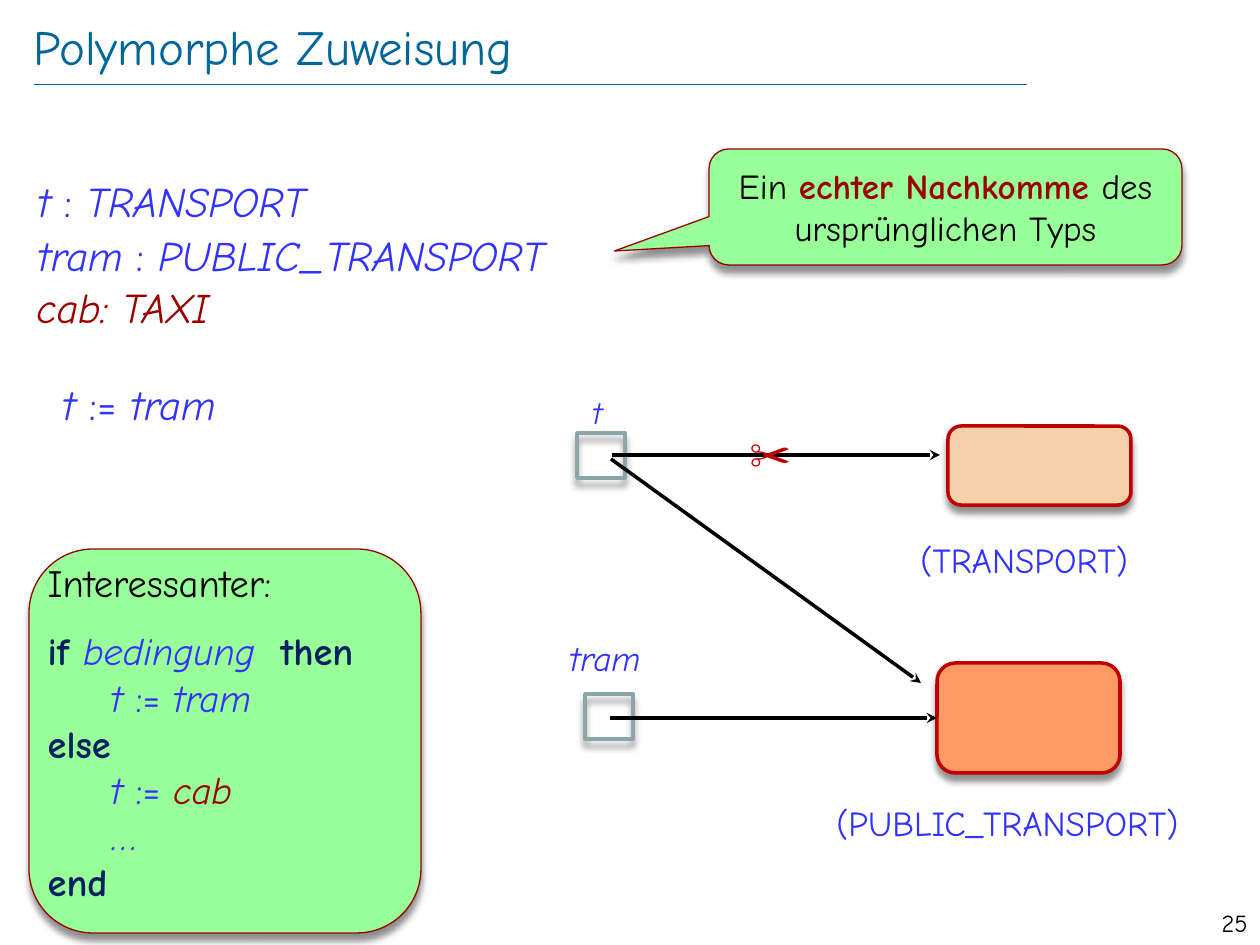
import pptx
import pptx.util
import pptx.dml.color
import pptx.enum.shapes
import pptx.enum.text
import pptx.oxml
import pptx.oxml.ns

RGB = pptx.dml.color.RGBColor
Pt = pptx.util.Pt
KIND = pptx.enum.shapes.MSO_SHAPE
LINE = pptx.enum.shapes.MSO_CONNECTOR.STRAIGHT
ALIGN = pptx.enum.text.PP_ALIGN
ANCHOR = pptx.enum.text.MSO_ANCHOR

FONT = "Comic Neue"
BLACK = RGB(0x00, 0x00, 0x00)
TEAL = RGB(0x00, 0x66, 0x99)
BLUE = RGB(0x33, 0x33, 0xFF)
NAVY = RGB(0x00, 0x20, 0x60)
WINE = RGB(0x99, 0x00, 0x00)
RED = RGB(0xC0, 0x00, 0x00)
GREEN = RGB(0x99, 0xFF, 0x99)
SAND = RGB(0xF4, 0xD1, 0xAA)
CORAL = RGB(0xFF, 0x99, 0x66)
GREY = RGB(0x8A, 0xA6, 0xA8)

NS = pptx.oxml.ns.nsdecls("a")
SHADOW = (f'<a:effectLst {NS}><a:outerShdw blurRad="50800" dist="50800" dir="5400000" '
          'rotWithShape="0"><a:srgbClr val="000000"><a:alpha val="43000"/></a:srgbClr>'
          '</a:outerShdw></a:effectLst>')


def px(n):
    return pptx.util.Emu(round(n * 914400 / 126))


def xml(text):
    return pptx.oxml.parse_xml(text)


def place(shape, x, y, w, h):
    shape.left, shape.top, shape.width, shape.height = px(x), px(y), px(w), px(h)


def write(para, size, *runs):
    """Add runs of (text, colour, style); the style may hold b, i and n for a line break."""
    for text, color, style in runs:
        run = para.add_run()
        run.text = text
        font = run.font
        font.name, font.size, font.color.rgb = FONT, Pt(size), color
        font.bold, font.italic = "b" in style, "i" in style
        if "n" in style:
            para.add_line_break()


def inset(frame, *sides):
    (frame.margin_left, frame.margin_top,
     frame.margin_right, frame.margin_bottom) = map(px, sides)


def label(slide, x, y, w, h, size, *runs, wrap=False):
    box = slide.shapes.add_textbox(px(x), px(y), px(w), px(h))
    box.text_frame.word_wrap = wrap
    para = box.text_frame.paragraphs[0]
    write(para, size, *runs)
    return para


def block(slide, kind, x, y, w, h, fill, edge, width):
    """Add a preset shape with a soft shadow; fill None leaves it hollow."""
    shape = slide.shapes.add_shape(kind, px(x), px(y), px(w), px(h))
    if fill is None:
        shape.fill.background()
    else:
        shape.fill.solid()
        shape.fill.fore_color.rgb = fill
    shape.line.color.rgb, shape.line.width = edge, Pt(width)
    shape.shadow.inherit = False
    props = shape._element.spPr
    props.remove(props.find(pptx.oxml.ns.qn("a:effectLst")))
    props.append(xml(SHADOW))
    return shape


def line(slide, x1, y1, x2, y2, color, width, head=False):
    link = slide.shapes.add_connector(LINE, px(x1), px(y1), px(x2), px(y2))
    link.line.color.rgb, link.line.width = color, Pt(width)
    if head:
        link.line._get_or_add_ln().append(xml(f'<a:tailEnd {NS} type="stealth"/>'))
    link._element.spPr.append(xml(f"<a:effectLst {NS}/>"))
    return link


def header(slide, x, y, w, h):
    title = slide.shapes.title
    place(title, x, y, w, h)
    frame = title.text_frame
    frame.vertical_anchor = ANCHOR.MIDDLE
    inset(frame, 0, 0, 0, 0)
    para = frame.paragraphs[0]
    para.alignment = ALIGN.LEFT
    write(para, 28, ("Polymorphe Zuweisung", TEAL, ""))
    line(slide, x, y + 68, x + 993, y + 68, TEAL, 0.25)


def decls(slide, x, y, w, h):
    """Place the declarations and the assignment below them."""
    body = slide.placeholders[1]
    place(body, x, y, w, h)
    frame = body.text_frame
    rows = [("t ", " TRANSPORT"), ("tram ", " PUBLIC_TRANSPORT")]
    for i, (name, kind) in enumerate(rows):
        para = frame.add_paragraph() if i else frame.paragraphs[0]
        props = para._p.get_or_add_pPr()
        props.set("marL", "0")
        props.set("indent", "0")
        props.append(xml(f"<a:buNone {NS}/>"))
        para.line_spacing = 0.9
        para.space_before = Pt(5 if i else 0)
        write(para, 24, (name, BLUE, "i"), (":", BLUE, ""), (kind, BLUE, "i"))
    label(slide, x - 1, y + 100, 314, 63, 24, ("cab: TAXI", WINE, "i"), wrap=True)
    label(slide, x + 25, y + 197, 314, 63, 24, ("t ", BLUE, "i"),
          (":=", BLUE, ""), (" tram", BLUE, "i"), wrap=True)


def callout(slide, x, y, w, h):
    shape = block(slide, KIND.ROUNDED_RECTANGULAR_CALLOUT, x, y, w, h, GREEN, WINE, 0.75)
    for i, value in enumerate((-0.7, 0.38, 0.17)):
        shape.adjustments[i] = value
    frame = shape.text_frame
    frame.word_wrap = True
    frame.vertical_anchor = ANCHOR.MIDDLE
    para = frame.paragraphs[0]
    para.alignment = ALIGN.CENTER
    write(para, 20, ("Ein ", BLACK, ""), ("echter Nachkomme ", WINE, "b"),
          ("des ursprünglichen Typs", BLACK, ""))


def graph(slide, x, y):
    """Place the references at left, the objects at right and the arrows between."""
    block(slide, KIND.ROUNDED_RECTANGLE, x + 371, y + 39, 183, 79, SAND, RED, 2)
    public = block(slide, KIND.ROUNDED_RECTANGLE, x + 360, y + 276, 183, 110, CORAL, RED, 2)
    label(slide, x + 331, y + 145, 270, 55, 20, ("(TRANSPORT)", BLUE, ""))
    label(slide, x + 247, y + 408, 418, 55, 20, ("(PUBLIC_TRANSPORT)", BLUE, ""))
    for dx, dy in ((0, 46), (8, 307)):
        block(slide, KIND.RECTANGLE, x + dx, y + dy, 48, 45, None, GREY, 2)
    line(slide, x + 35, y + 68, x + 363, y + 68, BLACK, 2, True)
    line(slide, x + 34, y + 72, x + 344, y + 296, BLACK, 2, True)
    link = line(slide, x + 33, y + 331, x + 360, y + 331, BLACK, 2, True)
    link.end_connect(public, 1)
    label(slide, x + 3, y, 40, 50, 18, ("t", BLUE, "i"))
    label(slide, x - 20, y + 243, 105, 55, 20, ("tram", BLUE, "i"))
    label(slide, x + 160, y + 35, 74, 63, 24, ("✂", RED, ""))


def code(slide, x, y, w, h):
    shape = block(slide, KIND.ROUNDED_RECTANGLE, x, y, w, h, GREEN, WINE, 0.75)
    frame = shape.text_frame
    frame.word_wrap = True
    frame.vertical_anchor = ANCHOR.TOP
    inset(frame, 0, 0, 0, 6)
    first, second = frame.paragraphs[0], frame.add_paragraph()
    first.alignment = second.alignment = ALIGN.LEFT
    first.line_spacing = 0.8
    second.space_before = Pt(13)
    write(first, 22, ("Interessanter:", BLACK, ""))
    write(second, 22,
          ("if ", NAVY, "b"), ("bedingung  ", BLUE, "i"), ("then ", NAVY, "bn"),
          ("\tt ", BLUE, "i"), (":= ", BLUE, ""), ("tram", BLUE, "in"),
          ("else", NAVY, "bn"),
          ("\tt ", BLUE, "i"), (":= ", BLUE, ""), ("cab", WINE, "in"),
          ("\t…", BLUE, "in"), ("end", NAVY, "b"))


def main():
    deck = pptx.Presentation()
    deck.slide_width, deck.slide_height = px(1260), px(945)
    slide = deck.slides.add_slide(deck.slide_layouts[1])
    header(slide, 34, 16, 1095, 60)
    decls(slide, 25, 175, 1149, 131)
    graph(slide, 577, 387)
    callout(slide, 709, 149, 473, 116)
    code(slide, 29, 549, 392, 384)
    page = label(slide, 1191, 902, 69, 30, 14, ("25", BLACK, ""), wrap=True)
    page.alignment = ALIGN.RIGHT
    deck.save("out.pptx")


if __name__ == "__main__":
    main()
